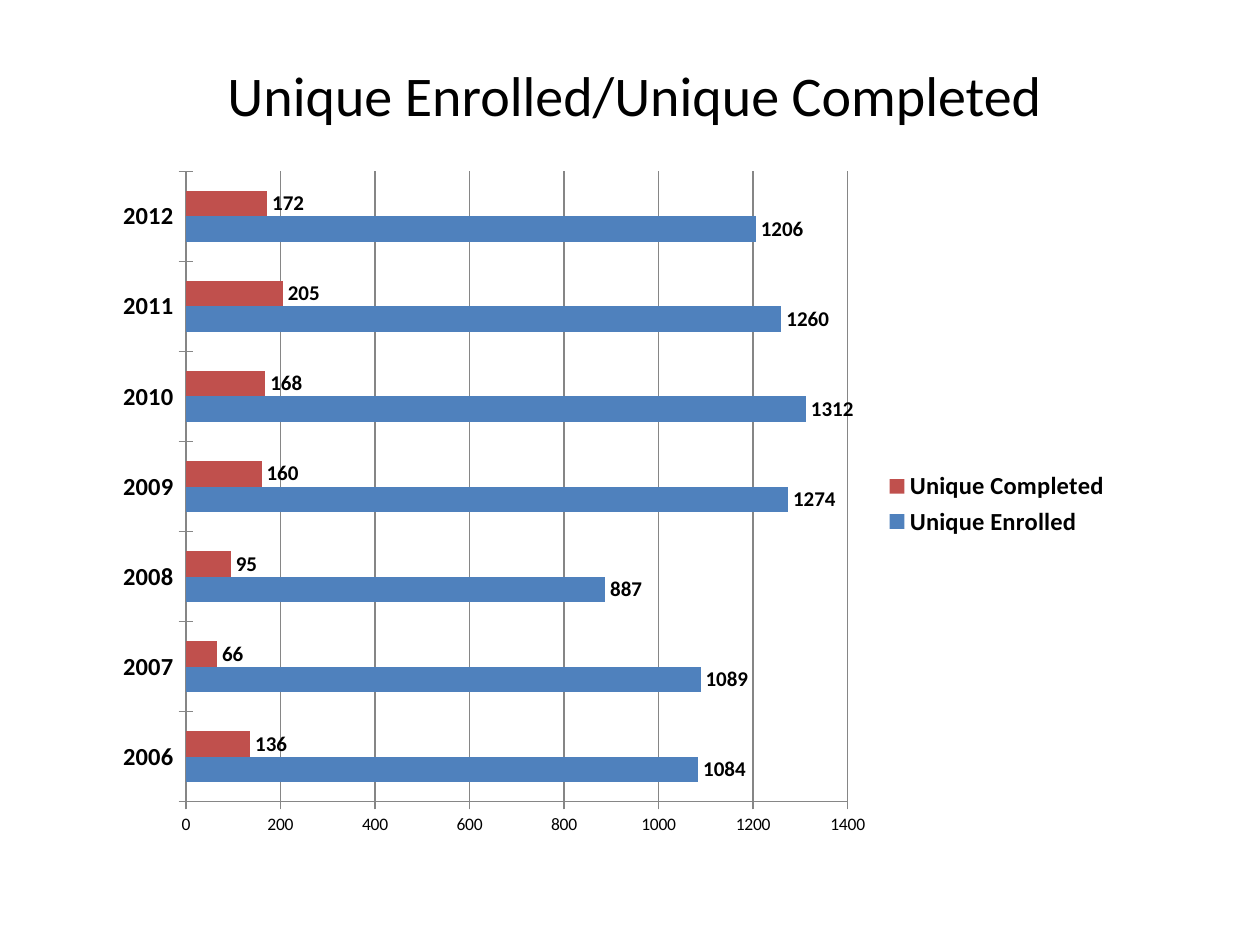
from lxml import etree
from pptx import Presentation
from pptx.chart.data import CategoryChartData
from pptx.dml.color import RGBColor
from pptx.enum.chart import (XL_CHART_TYPE, XL_LABEL_POSITION,
                             XL_LEGEND_POSITION, XL_TICK_MARK)
from pptx.enum.text import MSO_ANCHOR, PP_ALIGN
from pptx.oxml.ns import qn
from pptx.util import Inches, Pt

# Content
TITLE = "Unique Enrolled/Unique Completed"
YEARS = ["2006", "2007", "2008", "2009", "2010", "2011", "2012"]
BLUE = RGBColor(0x4F, 0x81, 0xBD)
RED = RGBColor(0xC0, 0x50, 0x4D)
GRAY = RGBColor(0x86, 0x86, 0x86)
BLACK = RGBColor(0, 0, 0)
SERIES = [
    ("Unique Enrolled", [1084, 1089, 887, 1274, 1312, 1260, 1206], BLUE),
    ("Unique Completed", [136, 66, 95, 160, 168, 205, 172], RED),
]
PLOT_AREA = {"x": 0.08, "y": 0.02, "w": 0.65, "h": 0.91}  # shares of the chart
FONT = "Calibri"


def style(font, size, bold=False):
    font.name = FONT
    font.size = Pt(size)
    font.bold = bold
    font.color.rgb = BLACK


def place_plot_area(chart):
    plot_area = chart._chartSpace.chart.plotArea
    for old_layout in plot_area.findall(qn("c:layout")):
        plot_area.remove(old_layout)
    layout = etree.Element(qn("c:layout"))
    manual = etree.SubElement(layout, qn("c:manualLayout"))
    settings = {"layoutTarget": "inner", "xMode": "edge", "yMode": "edge", **PLOT_AREA}
    for tag, value in settings.items():
        etree.SubElement(manual, qn(f"c:{tag}")).set("val", str(value))
    plot_area.insert(0, layout)


prs = Presentation()
prs.slide_width, prs.slide_height = Inches(10), Inches(7.5)
slide = prs.slides.add_slide(prs.slide_layouts[5])

# Title
title = slide.shapes.title
title.left, title.top = Inches(1), Inches(0.33)
title.width, title.height = Inches(8.08), Inches(0.83)
title.text_frame.text = TITLE
title.text_frame.vertical_anchor = MSO_ANCHOR.MIDDLE
heading = title.text_frame.paragraphs[0]
heading.alignment = PP_ALIGN.CENTER
style(heading.font, 32)

# Bar chart
enrollment = CategoryChartData()
enrollment.categories = YEARS
for name, counts, _ in SERIES:
    enrollment.add_series(name, counts)
chart = slide.shapes.add_chart(
    XL_CHART_TYPE.BAR_CLUSTERED, Inches(0.83), Inches(1.25),
    Inches(8.08), Inches(5.5), enrollment).chart
chart.has_title = False
style(chart.font, 10)
place_plot_area(chart)

# Bars and value labels
plot = chart.plots[0]
plot.gap_width = 150
plot.overlap = 0
plot.vary_by_categories = False
for series, (_, _, color) in zip(plot.series, SERIES):
    series.format.fill.solid()
    series.format.fill.fore_color.rgb = color
    labels = series.data_labels
    labels.show_value = True
    labels.position = XL_LABEL_POSITION.OUTSIDE_END
    style(labels.font, 12, bold=True)

# Axes
year_axis, count_axis = chart.category_axis, chart.value_axis
for axis in (year_axis, count_axis):
    axis.major_tick_mark = XL_TICK_MARK.CROSS
    axis.minor_tick_mark = XL_TICK_MARK.NONE
    axis.format.line.color.rgb = GRAY
style(year_axis.tick_labels.font, 14, bold=True)
style(count_axis.tick_labels.font, 10)
count_axis.minimum_scale, count_axis.maximum_scale = 0, 1400
count_axis.major_unit = 200
count_axis.has_major_gridlines = True
count_axis.major_gridlines.format.line.color.rgb = GRAY

# Legend
chart.has_legend = True
chart.legend.position = XL_LEGEND_POSITION.RIGHT
chart.legend.include_in_layout = False
style(chart.legend.font, 14, bold=True)

prs.save("out.pptx")
